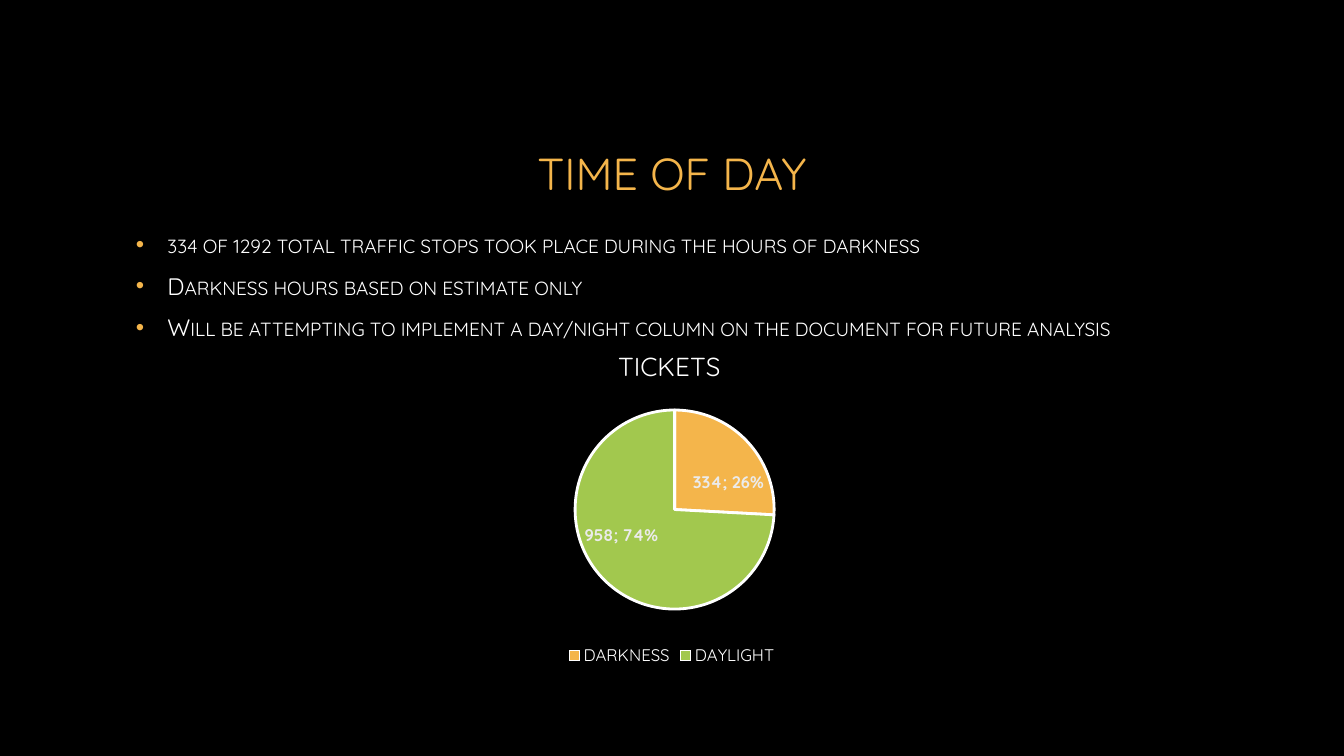
import pptx
import pptx.chart.data
import pptx.dml.color
import pptx.enum.chart
import pptx.enum.text
import pptx.oxml
import pptx.oxml.ns
import pptx.util
from dataclasses import dataclass

Pt = pptx.util.Pt
qn = pptx.oxml.ns.qn


@dataclass(frozen=True)
class Theme:
    font: str = "Quicksand"
    background: str = "000000"
    text: str = "FFFFFF"
    accent: str = "F4B54B"
    daylight: str = "A2C84E"
    label: str = "EBEBEB"
    title_size: float = 32
    body_size: float = 17
    chart_title_size: float = 18.6
    chart_size: float = 12


class SlideBuilder:
    def __init__(self, slide, theme):
        self.slide = slide
        self.theme = theme
        self.paint(slide.background.fill, theme.background)

    def paint(self, fill, color):
        fill.solid()
        fill.fore_color.rgb = pptx.dml.color.RGBColor.from_string(color)

    def style(self, font, size, color, bold=False):
        font.name = self.theme.font
        font.size = Pt(size)
        font.bold = bold
        font.color.rgb = pptx.dml.color.RGBColor.from_string(color)

    def text_box(self, left, top, width, height):
        box = self.slide.shapes.add_textbox(Pt(left), Pt(top), Pt(width), Pt(height))
        frame = box.text_frame
        frame.word_wrap = True
        frame.vertical_anchor = pptx.enum.text.MSO_ANCHOR.MIDDLE
        return frame

    def title(self, text, *bounds):
        frame = self.text_box(*bounds)
        frame.text = text
        para = frame.paragraphs[0]
        para.alignment = pptx.enum.text.PP_ALIGN.CENTER
        self.style(para.runs[0].font, self.theme.title_size, self.theme.accent)

    def bullets(self, lines, *bounds):
        frame = self.text_box(*bounds)
        frame.margin_bottom = Pt(30)
        frame.text = "\n".join(lines)
        for para in frame.paragraphs:
            para.space_before = Pt(3)
            para.space_after = Pt(6)
            self.bullet(para)
            span = para.runs[0]
            self.style(span.font, self.theme.body_size, self.theme.text)
            span._r.get_or_add_rPr().set("cap", "small")

    def bullet(self, para):
        properties = para._p.get_or_add_pPr()
        indent = Pt(22.5)
        properties.set("marL", str(indent))
        properties.set("indent", str(-indent))
        namespace = pptx.oxml.ns.nsdecls("a")
        for xml in (
            f'<a:buClr {namespace}><a:srgbClr val="{self.theme.accent}"/></a:buClr>',
            f'<a:buFont {namespace} typeface="Arial"/>',
            f'<a:buChar {namespace} char="•"/>',
        ):
            properties.append(pptx.oxml.parse_xml(xml))

    def place(self, parent, index, **fractions):
        """Position a chart part by fractions of the chart area."""
        for old in parent.findall(qn("c:layout")):
            parent.remove(old)
        modes = '<c:xMode val="edge"/><c:yMode val="edge"/>'
        values = "".join(f'<c:{key} val="{value}"/>' for key, value in fractions.items())
        target = '<c:layoutTarget val="inner"/>' if "w" in fractions else ""
        parent.insert(index, pptx.oxml.parse_xml(
            f'<c:layout {pptx.oxml.ns.nsdecls("c")}><c:manualLayout>'
            f"{target}{modes}{values}</c:manualLayout></c:layout>"))

    def pie(self, title, slices, colors, *bounds):
        theme = self.theme
        data = pptx.chart.data.CategoryChartData()
        data.categories = list(slices)
        data.add_series("Series 1", list(slices.values()))
        left, top, width, height = map(Pt, bounds)
        chart = self.slide.shapes.add_chart(
            pptx.enum.chart.XL_CHART_TYPE.PIE, left, top, width, height, data).chart
        self.style(chart.font, theme.chart_size, theme.text)

        chart.has_title = True
        heading = chart.chart_title.text_frame
        heading.text = title
        self.style(heading.paragraphs[0].runs[0].font, theme.chart_title_size, theme.text)
        chart.chart_title.include_in_layout = False
        self.place(chart.chart_title._element, 1, x=0.39, y=0.03)
        plot_area = chart._chartSpace.find(".//" + qn("c:plotArea"))
        self.place(plot_area, 0, x=0.31, y=0.23, w=0.39, h=0.59)

        chart.has_legend = True
        chart.legend.position = pptx.enum.chart.XL_LEGEND_POSITION.BOTTOM
        chart.legend.include_in_layout = False
        self.style(chart.legend.font, theme.chart_size, theme.text)

        plot = chart.plots[0]
        plot.vary_by_categories = True
        for index, color in enumerate(colors):
            part = plot.series[0].points[index].format
            self.paint(part.fill, color)
            self.paint(part.line.fill, theme.text)
            part.line.width = Pt(2)
        self.pie_labels(plot)

    def pie_labels(self, plot):
        plot.has_data_labels = True
        labels = plot.data_labels
        labels.show_value = True
        labels.show_percentage = True
        labels.position = pptx.enum.chart.XL_LABEL_POSITION.BEST_FIT
        self.style(labels.font, self.theme.chart_size, self.theme.label, bold=True)
        separator = pptx.oxml.parse_xml(
            f'<c:separator {pptx.oxml.ns.nsdecls("c")}>; </c:separator>')
        labels._element.find(qn("c:showBubbleSize")).addnext(separator)


def main():
    deck = pptx.Presentation()
    deck.slide_width, deck.slide_height = Pt(960), Pt(540)
    theme = Theme()
    page = SlideBuilder(deck.slides.add_slide(deck.slide_layouts[6]), theme)
    page.title("TIME OF DAY", 90, 48, 780, 150)
    page.bullets([
        "334 of 1292 total traffic stops took place during the hours of darkness",
        "Darkness hours based on estimate only",
        "Will be attempting to implement a day/night column on the document for future analysis",
    ], 90, 173, 780, 88.5)
    page.pie("TICKETS", {"DARKNESS": 334, "DAYLIGHT": 958},
             [theme.accent, theme.daylight], 289.5, 237.5, 381, 241)
    deck.save("out.pptx")


if __name__ == "__main__":
    main()
